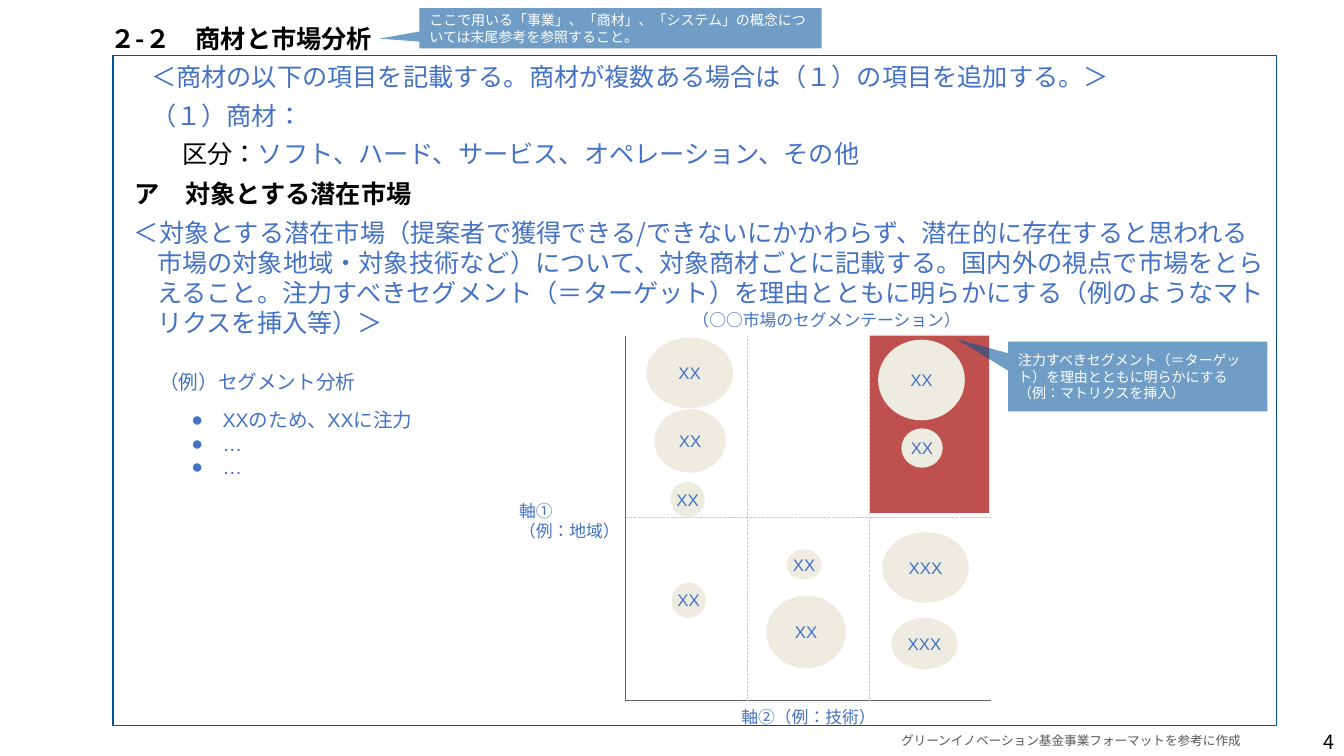
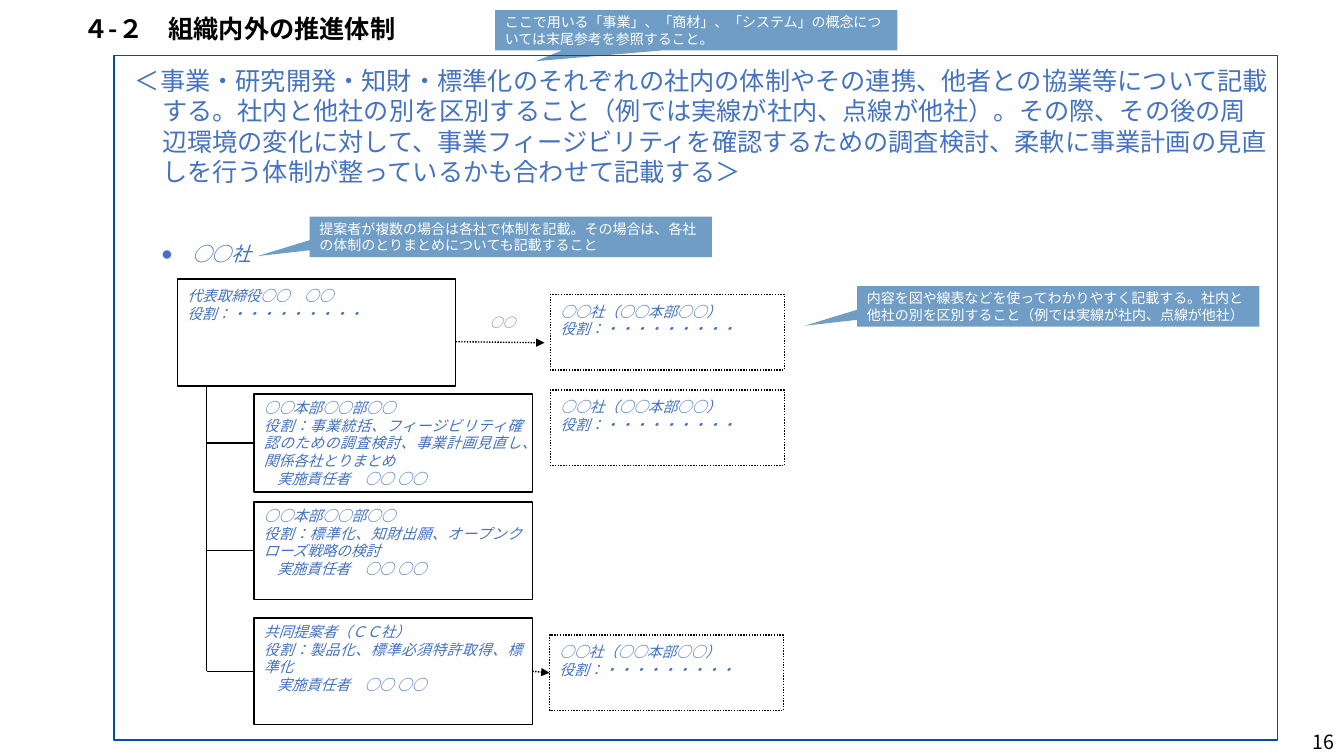
from dataclasses import dataclass

from lxml.etree import SubElement
from pptx import Presentation
from pptx.dml.color import RGBColor
from pptx.enum.dml import MSO_LINE
from pptx.enum.lang import MSO_LANGUAGE_ID
from pptx.enum.shapes import MSO_CONNECTOR, MSO_SHAPE
from pptx.enum.text import MSO_ANCHOR, PP_ALIGN
from pptx.oxml.ns import qn
from pptx.util import Inches, Pt


@dataclass(frozen=True)
class Theme:
    blue: str = "4472C4"
    navy: str = "005298"
    black: str = "000000"
    white: str = "FFFFFF"
    red: str = "C0504D"
    cream: str = "EEECE1"
    axis: str = "666666"
    grid: str = "CCCCCC"
    credit: str = "575757"
    sans: str = "Arial"
    japanese: str = "Noto Sans CJK JP"
    body: float = 18
    note: float = 14
    label: float = 12
    role: float = 10.5
    callout: float = 10
    small: float = 9
    callout_opacity: int = 56000


THEME = Theme()


@dataclass(frozen=True)
class Style:
    size: float
    color: str = THEME.blue
    font: str = THEME.sans
    bold: bool = False
    italic: bool = False


BODY = Style(THEME.body, font=THEME.japanese)
BLACK_BODY = Style(THEME.body, THEME.black, THEME.japanese)
HEADING = Style(THEME.body, THEME.black, THEME.japanese, bold=True)
PAGE_NUMBER = Style(THEME.note, THEME.black, THEME.japanese)
CREDIT = Style(THEME.small, THEME.credit)
CALLOUT = Style(THEME.callout, THEME.white)
NOTE = Style(THEME.note)
LABEL = Style(THEME.label)
ROLE = Style(THEME.role, font=THEME.japanese, italic=True)
COMPANY = Style(THEME.note, font=THEME.japanese, italic=True)
ARROW_LABEL = Style(THEME.small, font=THEME.japanese, italic=True)


@dataclass(frozen=True)
class Para:
    spans: tuple  # (text, style) pairs
    left: float = 0
    first: float = 0
    before: float = 0
    align: PP_ALIGN = PP_ALIGN.LEFT
    bullet: str = ""


def plain(text, style, **layout):
    return Para(((text, style),), **layout)


# Content: shared
CONCEPT_NOTE = "ここで用いる「事業」、「商材」、「システム」の概念については末尾参考を参照すること。"

# Content: market analysis
PRODUCT_TEXT = [
    plain("＜商材の以下の項目を記載する。商材が複数ある場合は（１）の項目を追加する。＞", BODY,
          left=1.06, first=-0.27, before=6),
    plain("（１）商材：", BODY, left=1.06, first=-0.27, before=6),
    Para((("区分：", BLACK_BODY), ("ソフト、ハード、サービス、オペレーション、その他", BODY)),
         left=1.37, first=-0.27, before=6),
]
MARKET_TEXT = [
    plain("ア　対象とする潜在市場", HEADING, left=1.38, first=-0.59, before=6),
    plain("＜対象とする潜在市場（提案者で獲得できる/できないにかかわらず、潜在的に存在すると思われる"
          "市場の対象地域・対象技術など）について、対象商材ごとに記載する。国内外の視点で市場をとらえること。"
          "注力すべきセグメント（＝ターゲット）を理由とともに明らかにする（例のようなマトリクスを挿入等）＞",
          BODY, left=1.01, first=-0.23, before=6),
]
SEGMENT_POINTS = ["XXのため、XXに注力", "…", "…"]
BUBBLES = [  # label, left, top, width, height
    ("XX", 8.71, 3.37, 0.86, 0.8),
    ("XX", 6.41, 3.35, 0.86, 0.7),
    ("XX", 7.6, 5.91, 0.79, 0.72),
    ("XX", 7.8, 5.45, 0.35, 0.3),
    ("XXX", 8.75, 5.28, 0.86, 0.7),
    ("XX", 8.94, 4.25, 0.41, 0.39),
    ("XXX", 8.84, 6.13, 0.66, 0.51),
    ("XX", 6.49, 4.06, 0.71, 0.63),
    ("XX", 6.66, 5.78, 0.34, 0.35),
    ("XX", 6.65, 4.78, 0.34, 0.35),
]
MATRIX_LEFT, MATRIX_TOP, MATRIX_RIGHT, MATRIX_BOTTOM = 6.2, 3.33, 9.83, 6.95
MATRIX_COLUMNS, MATRIX_MIDDLE = 3, 5.13

# Content: organisation
ORGANISATION_TEXT = (
    "＜事業・研究開発・知財・標準化のそれぞれの社内の体制やその連携、他者との協業等について記載する。"
    "社内と他社の別を区別すること（例では実線が社内、点線が他社）。その際、その後の周辺環境の変化に対して、"
    "事業フィージビリティを確認するための調査検討、柔軟に事業計画の見直しを行う体制が整っているかも合わせて記載する＞")
OPEN_ROLE = "役割：・・・・・・・・・"
LEADER = ["代表取締役○○　○○", OPEN_ROLE]
PARTNER = ["○○社（○○本部○○）", OPEN_ROLE]
MANAGER = "実施責任者　○○ ○○"
DIVISION = "○○本部○○部○○"
MEMBERS = [  # top, height, name, role
    (3.91, 0.97, DIVISION,
     "役割：事業統括、フィージビリティ確認のための調査検討、事業計画見直し、関係各社とりまとめ"),
    (4.98, 0.97, DIVISION, "役割：標準化、知財出願、オープンクローズ戦略の検討"),
    (6.13, 1.06, "共同提案者（ＣＣ社）", "役割：製品化、標準必須特許取得、標準化"),
]
PARTNER_PLACES = [(5.46, 2.92), (5.46, 3.87), (5.45, 6.3)]
BOX_WIDTH, MEMBER_LEFT, TRUNK = 2.76, 2.52, 2.05


# Drawing helpers
def rgb(code):
    return RGBColor.from_string(code)


def write(frame, paragraphs, anchor=MSO_ANCHOR.TOP, wrap=True, top=0.05):
    frame.word_wrap = wrap
    frame.vertical_anchor = anchor
    frame.margin_left = frame.margin_right = Inches(0.1)
    frame.margin_top, frame.margin_bottom = Inches(top), Inches(0.05)
    for index, content in enumerate(paragraphs):
        para = frame.paragraphs[0] if index == 0 else frame.add_paragraph()
        para.alignment = content.align
        para.space_before = Pt(content.before)
        properties = para._p.get_or_add_pPr()
        properties.set("marL", str(Inches(content.left)))
        properties.set("indent", str(Inches(content.first)))
        if content.bullet:
            SubElement(properties, qn("a:buFont")).set("typeface", THEME.sans)
            SubElement(properties, qn("a:buChar")).set("char", content.bullet)
        for text, style in content.spans:
            span = para.add_run()
            span.text = text
            font = span.font
            font.name, font.size = style.font, Pt(style.size)
            font.bold, font.italic = style.bold, style.italic
            font.color.rgb = rgb(style.color)
            font.language_id = MSO_LANGUAGE_ID.JAPANESE
            east_asian = SubElement(span._r.get_or_add_rPr(), qn("a:ea"))
            east_asian.set("typeface", THEME.japanese)


def add_text(page, place, paragraphs, **layout):
    box = page.shapes.add_textbox(*map(Inches, place))
    write(box.text_frame, paragraphs, **layout)


def add_box(page, kind, place, fill=None, line=None, width=1, dash=None):
    box = page.shapes.add_shape(kind, *map(Inches, place))
    box.shadow.inherit = False
    if fill:
        box.fill.solid()
        box.fill.fore_color.rgb = rgb(fill)
    else:
        box.fill.background()
    if line:
        box.line.color.rgb = rgb(line)
        box.line.width = Pt(width)
        box.line.dash_style = dash
    else:
        box.line.fill.background()
    return box


def add_line(page, start, end, color=THEME.black, width=0.75, dash=None, arrow=False):
    line = page.shapes.add_connector(MSO_CONNECTOR.STRAIGHT, *map(Inches, start + end))
    line.line.color.rgb = rgb(color)
    line.line.width = Pt(width)
    line.line.dash_style = dash
    if arrow:
        SubElement(line.line._get_or_add_ln(), qn("a:tailEnd")).set("type", "triangle")
    SubElement(line._element.spPr, qn("a:effectLst"))
    return line


def add_callout(page, place, pointer, text):
    box = add_box(page, MSO_SHAPE.RECTANGULAR_CALLOUT, place, THEME.navy)
    box.adjustments[0], box.adjustments[1] = pointer
    color = box._element.spPr.find(qn("a:solidFill"))[0]
    SubElement(color, qn("a:alpha")).set("val", str(THEME.callout_opacity))
    write(box.text_frame, [plain(text, CALLOUT)], MSO_ANCHOR.MIDDLE)


def add_page(deck, number, title, title_place, frame_place):
    page = deck.slides.add_slide(deck.slide_layouts[6])
    add_text(page, (12.48, 7.21, 0.85, 0.29),
             [plain(number, PAGE_NUMBER, align=PP_ALIGN.RIGHT)], anchor=MSO_ANCHOR.MIDDLE)
    add_box(page, MSO_SHAPE.RECTANGLE, frame_place, line=THEME.navy)
    add_text(page, title_place, [plain(title, HEADING)], anchor=MSO_ANCHOR.MIDDLE)
    return page


# Market analysis page
def draw_matrix(page):
    column = (MATRIX_RIGHT - MATRIX_LEFT) / MATRIX_COLUMNS
    add_box(page, MSO_SHAPE.RECTANGLE, (8.63, MATRIX_TOP, 1.18, 1.76), THEME.red)
    add_line(page, (MATRIX_LEFT, MATRIX_BOTTOM), (MATRIX_RIGHT, MATRIX_BOTTOM), THEME.axis)
    add_line(page, (MATRIX_LEFT, MATRIX_MIDDLE), (MATRIX_RIGHT, MATRIX_MIDDLE),
             THEME.grid, dash=MSO_LINE.SQUARE_DOT)
    for index in range(MATRIX_COLUMNS):
        x = MATRIX_LEFT + index * column
        add_line(page, (x, MATRIX_BOTTOM), (x, MATRIX_TOP),
                 THEME.grid if index else THEME.axis,
                 dash=MSO_LINE.SQUARE_DOT if index else None)
    for label, *place in BUBBLES:
        bubble = add_box(page, MSO_SHAPE.OVAL, place, THEME.cream)
        write(bubble.text_frame, [plain(label, LABEL, align=PP_ALIGN.CENTER)],
              MSO_ANCHOR.MIDDLE, wrap=False)
    add_text(page, (5.05, 4.97, 1.3, 0.39),
             [plain("軸①", LABEL), plain("（例：地域）", LABEL)], top=0)
    add_text(page, (7.02, 6.97, 2, 0.28),
             [plain("軸②（例：技術）", LABEL, align=PP_ALIGN.CENTER)],
             anchor=MSO_ANCHOR.MIDDLE)
    add_text(page, (6.77, 3.07, 3.2, 0.26),
             [plain("（○○市場のセグメンテーション）", LABEL)], top=0)


def build_market(deck):
    page = add_page(deck, "4", "２-２　商材と市場分析", (1, 0.19, 11.5, 0.38),
                    (1.12, 0.55, 11.54, 6.65))
    add_text(page, (0.61, 0.56, 12.21, 1.19), PRODUCT_TEXT)
    add_text(page, (0.45, 1.72, 12.21, 1.7), MARKET_TEXT)
    add_text(page, (8.64, 7.21, 3.96, 0.27),
             [plain("グリーンイノベーション基金事業フォーマットを参考に作成", CREDIT,
                    align=PP_ALIGN.CENTER)], anchor=MSO_ANCHOR.MIDDLE)
    add_text(page, (1.48, 3.67, 3.81, 0.24), [plain("（例）セグメント分析", NOTE)],
             anchor=MSO_ANCHOR.MIDDLE)
    add_text(page, (1.8, 3.89, 3.86, 1.02),
             [plain(point, NOTE, left=0.31, first=-0.31, bullet="●") for point in SEGMENT_POINTS],
             anchor=MSO_ANCHOR.MIDDLE)
    draw_matrix(page)
    add_callout(page, (10, 3.39, 2.57, 0.69), (-0.7, -0.54),
                "注力すべきセグメント（＝ターゲット）を理由とともに明らかにする（例：マトリクスを挿入）")
    add_callout(page, (4.16, 0.08, 3.99, 0.4), (-0.6, 0.26), CONCEPT_NOTE)


# Organisation page
def add_role_box(page, place, lines, manager=None, dash=None, top=0.05):
    box = add_box(page, MSO_SHAPE.RECTANGLE, place, THEME.white, THEME.black, dash=dash)
    paragraphs = [plain(line, ROLE, align=PP_ALIGN.JUSTIFY) for line in lines]
    if manager:
        paragraphs.append(plain(manager, ROLE, first=0.13, align=PP_ALIGN.JUSTIFY))
    write(box.text_frame, paragraphs, top=top)
    return box


def draw_organisation(page):
    add_role_box(page, (1.76, 2.77, BOX_WIDTH, 1.06), LEADER, top=0.08)
    partners = [add_role_box(page, (left, top, 2.32, 0.75), PARTNER,
                             dash=MSO_LINE.ROUND_DOT, top=0.08)
                for left, top in PARTNER_PLACES]
    for top, height, *lines in MEMBERS:
        member = add_role_box(page, (MEMBER_LEFT, top, BOX_WIDTH, height), lines, MANAGER)
        middle = top + height / 2
        branch = add_line(page, (TRUNK, middle), (MEMBER_LEFT, middle))
        branch.end_connect(member, 1)
    add_line(page, (TRUNK, 3.83), (TRUNK, middle))
    dotted = dict(width=1, dash=MSO_LINE.ROUND_DOT, arrow=True)
    add_line(page, (4.52, 3.39), (5.4, 3.4), **dotted)
    alliance = add_line(page, (5.28, middle), (5.45, middle), **dotted)
    alliance.begin_connect(member, 3)
    alliance.end_connect(partners[-1], 1)
    add_text(page, (4.53, 3.05, 0.91, 0.3),
             [plain("○○", ARROW_LABEL, align=PP_ALIGN.CENTER)], anchor=MSO_ANCHOR.MIDDLE)


def build_organisation(deck):
    page = add_page(deck, "16", "４-２　組織内外の推進体制", (0.73, 0.09, 11.5, 0.38),
                    (1.13, 0.55, 11.54, 6.79))
    add_text(page, (0.45, 0.6, 12.25, 1.31),
             [plain(ORGANISATION_TEXT, BODY, left=1.06, first=-0.27, before=6)])
    add_text(page, (1.5, 2.35, 1.43, 0.34),
             [plain("○○社", COMPANY, left=0.31, first=-0.31, bullet="●")])
    draw_organisation(page)
    add_callout(page, (8.5, 2.84, 3.99, 0.4), (-0.63, 0.48),
                "内容を図や線表などを使ってわかりやすく記載する。社内と他社の別を区別すること（例では実線が社内、点線が他社）")
    add_callout(page, (3.07, 2.15, 3.99, 0.4), (-0.63, 0.48),
                "提案者が複数の場合は各社で体制を記載。その場合は、各社の体制のとりまとめについても記載すること")
    add_callout(page, (4.91, 0.1, 3.99, 0.4), (-0.4, 0.77), CONCEPT_NOTE)


def main():
    deck = Presentation()
    deck.slide_width, deck.slide_height = Inches(13.33), Inches(7.5)
    build_market(deck)
    build_organisation(deck)
    deck.save("out.pptx")


if __name__ == "__main__":
    main()
